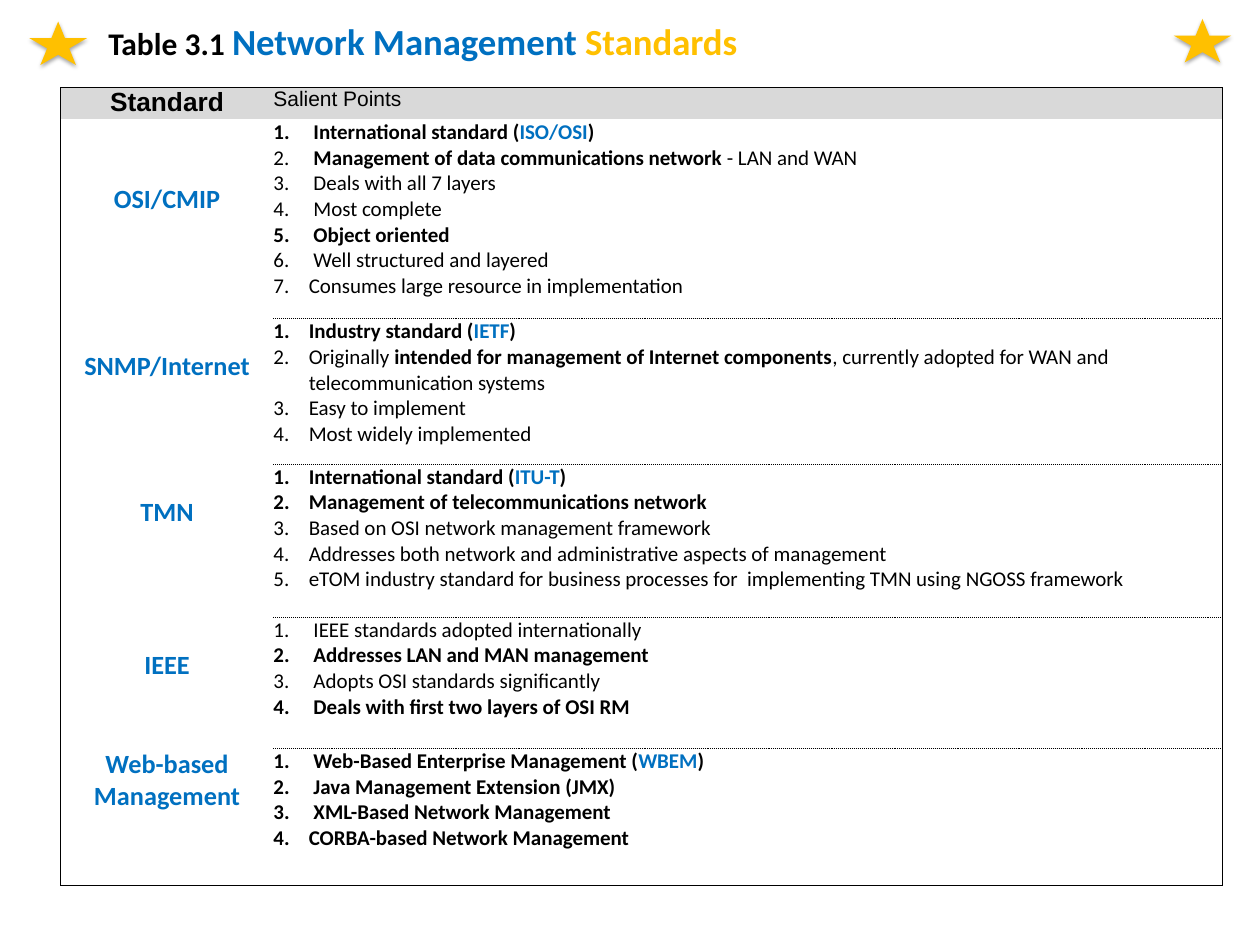
from lxml.etree import SubElement as Sub
from pptx import Presentation as Deck
from pptx.dml.color import RGBColor as Rgb
from pptx.enum.shapes import MSO_SHAPE as Kind
from pptx.enum.text import PP_ALIGN as Align
from pptx.oxml import parse_xml
from pptx.oxml.ns import nsdecls, qn
from pptx.util import Cm, Pt

HUES = {"ink": "000000", "blue": "0070C0", "gold": "FFC000", "head": "D9D9D9"}
SOLID, DOTS = (0.75, "solid"), (1, "sysDot")


# Run styles for the points: plain, bold, and the blue name of a body
def plain(text):
    return text, {"bold": False}


def bold(text):
    return text, {"bold": True}


def name(text):
    return text, {"bold": True, "hue": "blue"}


# Standard, gap above its label, row height, salient points
ROWS = [
    ("OSI/CMIP", 1.72, 5.36, [
        [bold(" International standard ("), name("ISO/OSI"), bold(")")],
        [plain(" "), bold("Management of data communications network"),
         plain(" - LAN and WAN")],
        [plain(" Deals with all 7 layers")],
        [plain(" Most complete")],
        [bold(" Object oriented")],
        [plain(" Well structured and layered")],
        [plain("Consumes large resource in implementation")]]),
    ("SNMP/Internet", 0.86, 3.91, [
        [bold("Industry standard ("), name("IETF"), bold(")")],
        [plain("Originally "),
         bold("intended for management of Internet components"),
         plain(", currently adopted for WAN and telecommunication systems")],
        [plain("Easy to implement")],
        [plain("Most widely implemented")]]),
    ("TMN", 0.86, 4.11, [
        [bold("International standard ("), name("ITU-T"), bold(")")],
        [bold("Management of telecommunications network")],
        [plain("Based on OSI network management framework")],
        [plain("Addresses both network and administrative aspects of "
               "management")],
        [plain("eTOM industry standard for business processes for  "
               "implementing TMN using NGOSS framework")]]),
    ("IEEE", 0.86, 3.53, [
        [plain(" IEEE standards adopted internationally")],
        [bold(" Addresses LAN and MAN management")],
        [plain(" Adopts OSI standards significantly")],
        [bold(" Deals with first two layers of OSI RM")]]),
    ("Web-based Management", 0, 3.68, [
        [bold(" Web-Based Enterprise Management ("), name("WBEM"), bold(")")],
        [bold(" Java Management Extension (JMX)")],
        [bold(" XML-Based Network Management")],
        [bold("CORBA-based Network Management")]]),
]


def write(par, text, size=16, font="Calibri", hue="ink", bold=False):
    run = par.add_run()
    run.text = text
    run.font.size, run.font.name, run.font.bold = Pt(size), font, bold
    run.font.color.rgb = Rgb.from_string(HUES[hue])


class Page:
    def __init__(self, deck):
        self.slide = deck.slides.add_slide(deck.slide_layouts[6])
        self.hues = HUES

    def title(self, box, runs):
        frame = self.slide.shapes.add_textbox(*map(Cm, box)).text_frame
        frame.word_wrap = True
        par = frame.paragraphs[0]
        par.alignment = Align.CENTER
        for text, form in runs:
            write(par, text, bold=True, **form)

    def star(self, left, top):
        star = self.slide.shapes.add_shape(
            Kind.STAR_5_POINT, Cm(left), Cm(top), Cm(1.55), Cm(1.17))
        star.fill.solid()
        star.fill.fore_color.rgb = Rgb.from_string(self.hues["gold"])
        star.line.fill.background()
        # Soft shadow straight below
        star.shadow.inherit = False
        star._element.spPr.find(qn("a:effectLst")).append(parse_xml(
            f'<a:outerShdw {nsdecls("a")} blurRad="{Pt(3.1)}" '
            f'dist="{Pt(1.8)}" dir="5400000" rotWithShape="0">'
            f'<a:srgbClr val="{self.hues["ink"]}"><a:alpha val="35000"/>'
            '</a:srgbClr></a:outerShdw>'))

    def grid(self, left, top, cols, rows):
        grid = self.slide.shapes.add_table(
            len(rows), len(cols), Cm(left), Cm(top),
            Cm(sum(cols)), Cm(sum(rows))).table
        grid.first_row = grid.horz_banding = False
        for col, width in zip(grid.columns, cols):
            col.width = Cm(width)
        for row, height in zip(grid.rows, rows):
            row.height = Cm(height)
        return grid

    def cell(self, cell, gap=0, fill=None, **edges):
        cell.margin_left = cell.margin_right = cell.margin_bottom = 0
        cell.margin_top = Cm(gap)
        if fill:
            cell.fill.solid()
            cell.fill.fore_color.rgb = Rgb.from_string(self.hues[fill])
        else:
            cell.fill.background()
        # Borders stand before the fill, in the order L, R, T, B
        prop = cell._tc.get_or_add_tcPr()
        for spot, side in enumerate("LRTB"):
            width, dash = edges.get(side) or (0, None)
            line = parse_xml(f'<a:ln{side} {nsdecls("a")} w="{Pt(width)}"/>')
            if dash:
                paint = Sub(line, qn("a:solidFill"))
                Sub(paint, qn("a:srgbClr"), val=self.hues["ink"])
                Sub(line, qn("a:prstDash"), val=dash)
            else:
                Sub(line, qn("a:noFill"))
            prop.insert(spot, line)
        return cell.text_frame

    def label(self, frame, text, **form):
        par = frame.paragraphs[0]
        par.alignment = Align.CENTER
        write(par, text, size=20, bold=True, **form)

    def points(self, frame, items):
        for spot, runs in enumerate(items):
            par = frame.add_paragraph() if spot else frame.paragraphs[0]
            prop = par._p.get_or_add_pPr()
            prop.set("marL", str(Cm(0.95)))
            prop.set("indent", str(-Cm(0.95)))
            mark = Sub(prop, qn("a:buClr"))
            Sub(mark, qn("a:srgbClr"), val=self.hues["ink"])
            Sub(prop, qn("a:buFont"), typeface="+mj-lt")
            Sub(prop, qn("a:buAutoNum"), type="arabicPeriod")
            for text, form in runs:
                write(par, text, **form)


def main():
    deck = Deck()
    deck.slide_width, deck.slide_height = Cm(33.87), Cm(25.4)
    page = Page(deck)

    # Title
    page.title((0.71, 0.38, 21.31, 1.6), [
        ("Table 3.1 ", {"size": 24}),
        ("Network Management ", {"size": 28, "hue": "blue"}),
        ("Standards", {"size": 28, "hue": "gold"})])

    # Table head
    grid = page.grid(1.63, 2.36, [5.72, 25.5], [0.84] + [r[2] for r in ROWS])
    frame = page.cell(grid.cell(0, 0), fill="head", L=SOLID, T=SOLID)
    page.label(frame, "Standard", font="Arial")
    frame = page.cell(grid.cell(0, 1), fill="head", T=SOLID, R=SOLID)
    write(frame.paragraphs[0], "Salient Points", font="Arial")

    # One row for each standard, dotted lines between the points
    for row, (text, gap, _, items) in enumerate(ROWS, 1):
        last = row == len(ROWS)
        frame = page.cell(grid.cell(row, 0), gap, L=SOLID,
                          B=SOLID if last else None)
        page.label(frame, text, hue="blue")
        frame = page.cell(grid.cell(row, 1), R=SOLID,
                          T=DOTS if row > 1 else None,
                          B=SOLID if last else DOTS)
        page.points(frame, items)

    # Corner stars
    page.star(0.79, 0.58)
    page.star(31.55, 0.51)
    deck.save("out.pptx")


if __name__ == "__main__":
    main()
